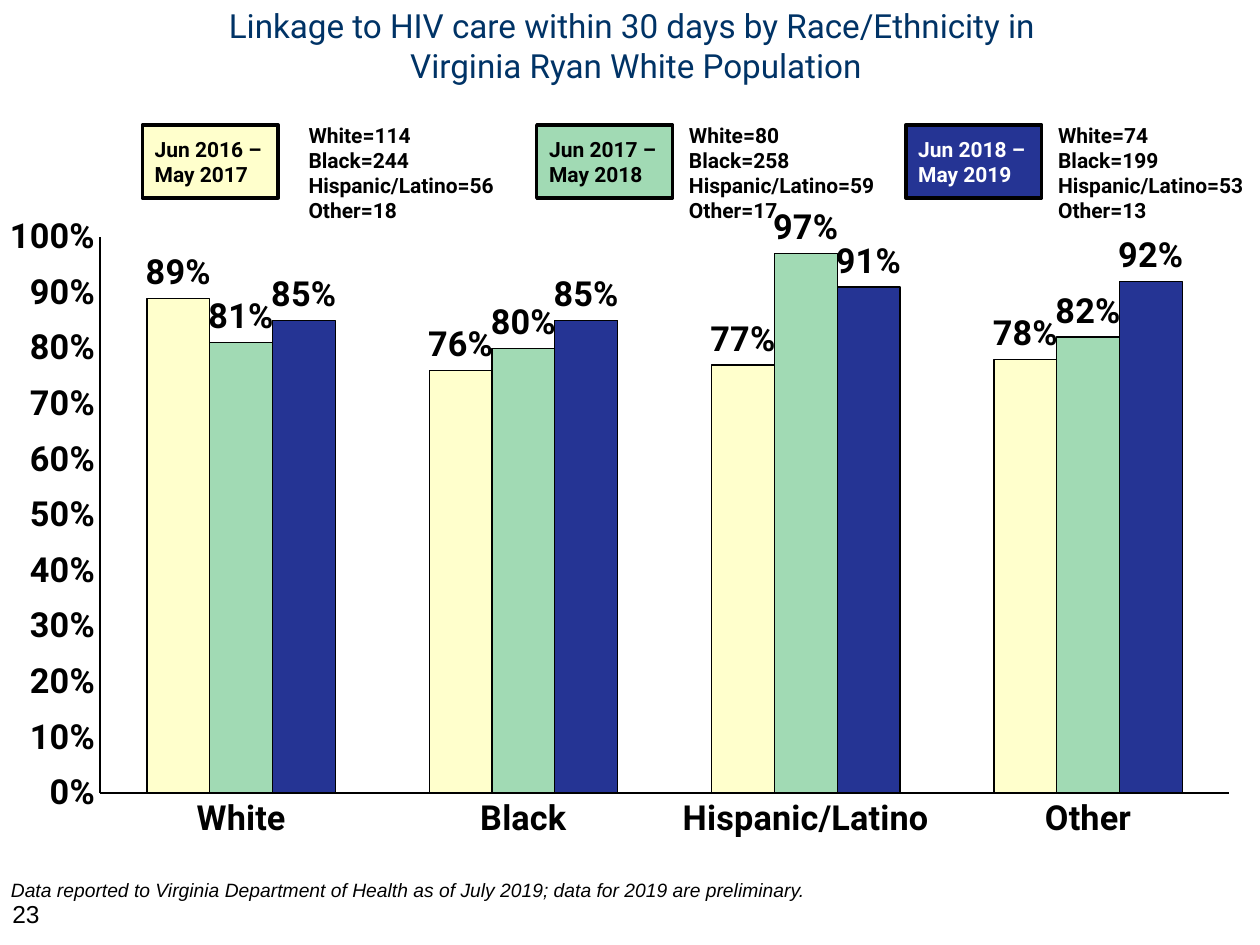
from lxml import etree
from pptx import Presentation
from pptx.chart.data import CategoryChartData
from pptx.dml.color import RGBColor
from pptx.enum.chart import XL_CHART_TYPE, XL_LABEL_POSITION, XL_TICK_MARK
from pptx.enum.shapes import MSO_SHAPE
from pptx.enum.text import MSO_ANCHOR, PP_ALIGN
from pptx.oxml.ns import qn
from pptx.util import Cm, Pt

COLUMN = XL_CHART_TYPE.COLUMN_CLUSTERED
OUTSIDE = XL_LABEL_POSITION.OUTSIDE_END
NO_TICK = XL_TICK_MARK.NONE
RECT = MSO_SHAPE.RECTANGLE
TOP, MIDDLE = MSO_ANCHOR.TOP, MSO_ANCHOR.MIDDLE
LEFT, CENTER = PP_ALIGN.LEFT, PP_ALIGN.CENTER

BLACK = RGBColor(0, 0, 0)
WHITE = RGBColor(255, 255, 255)
NAVY = RGBColor(0, 51, 102)
CREAM = RGBColor(255, 255, 204)
GREEN = RGBColor(161, 218, 180)
BLUE = RGBColor(37, 52, 148)

TITLE = "Linkage to HIV care within 30 days by Race/Ethnicity in \vVirginia Ryan White Population"
SOURCE = "Data reported to Virginia Department of Health as of July 2019; data for 2019 are preliminary."
PAGE = "23"
GROUPS = ["White", "Black", "Hispanic/Latino", "Other"]
PERIODS = [
    dict(name="Jun 2016 – May 2017", rates=(0.89, 0.76, 0.77, 0.78), counts=(114, 244, 56, 18),
         fill=CREAM, ink=BLACK, key=2.87, note=5.97, wide=6.53),
    dict(name="Jun 2017 – May 2018", rates=(0.81, 0.80, 0.97, 0.82), counts=(80, 258, 59, 17),
         fill=GREEN, ink=BLACK, key=10.82, note=13.64, wide=4.62),
    dict(name="Jun 2018 – May 2019", rates=(0.85, 0.85, 0.91, 0.92), counts=(74, 199, 53, 13),
         fill=BLUE, ink=WHITE, key=18.26, note=21.08, wide=4.39),
]
PLOT = dict(x=0.05, y=0.207, w=0.923, h=0.748)


def set_font(font, size, color=BLACK, name="Roboto", bold=False, italic=False):
    font.name, font.size = name, Pt(size)
    font.bold, font.italic = bold, italic
    font.color.rgb = color


def set_line(line, width):
    line.color.rgb = BLACK
    line.width = Pt(width)


def fill_text(shape, text, size, align=LEFT, anchor=TOP, **style):
    frame = shape.text_frame
    frame.word_wrap = True
    frame.vertical_anchor = anchor
    frame.text = text
    for para in frame.paragraphs:
        para.alignment = align
        for run in para.runs:
            set_font(run.font, size, **style)


def add_text(slide, box, text, size, **style):
    shape = slide.shapes.add_textbox(*map(Cm, box))
    fill_text(shape, text, size, **style)


def add_key(slide, period):
    key = slide.shapes.add_shape(RECT, Cm(period["key"]), Cm(2.52), Cm(2.74), Cm(1.47))
    key.shadow.inherit = False
    key.fill.solid()
    key.fill.fore_color.rgb = period["fill"]
    set_line(key.line, 2)
    fill_text(key, period["name"], 12, anchor=MIDDLE, color=period["ink"], bold=True)


def set_plot(chart):
    area = chart.element.find(".//" + qn("c:plotArea"))
    for old in area.findall(qn("c:layout")):
        area.remove(old)
    layout = etree.Element(qn("c:layout"))
    area.insert(0, layout)
    manual = etree.SubElement(layout, qn("c:manualLayout"))
    parts = [("layoutTarget", "inner"), ("xMode", "edge"), ("yMode", "edge"), *PLOT.items()]
    for tag, val in parts:
        etree.SubElement(manual, qn("c:" + tag)).set("val", str(val))


def add_rates(slide):
    data = CategoryChartData(number_format="0%")
    data.categories = GROUPS
    for period in PERIODS:
        data.add_series(period["name"], period["rates"])
    box = map(Cm, (0.2, 1.68, 25.25, 15.24))
    chart = slide.shapes.add_chart(COLUMN, *box, data).chart
    chart.has_legend = chart.has_title = False
    set_font(chart.font, 20, bold=True)
    set_plot(chart)

    for axis in (chart.category_axis, chart.value_axis):
        axis.has_major_gridlines = False
        axis.major_tick_mark = axis.minor_tick_mark = NO_TICK
        set_line(axis.format.line, 0.75)
    scale = chart.value_axis
    scale.minimum_scale, scale.maximum_scale, scale.major_unit = 0, 1, 0.1
    scale.tick_labels.number_format = "0%"
    scale.tick_labels.number_format_is_linked = False

    plot = chart.plots[0]
    plot.gap_width, plot.overlap = 150, 0
    plot.vary_by_categories = False
    for bars, period in zip(plot.series, PERIODS):
        bars.format.fill.solid()
        bars.format.fill.fore_color.rgb = period["fill"]
        set_line(bars.format.line, 0.75)
        labels = bars.data_labels
        labels.show_value = True
        labels.position = OUTSIDE
        labels.number_format = "0%"
        labels.number_format_is_linked = False
        set_font(labels.font, 20, bold=True)


def main():
    deck = Presentation()
    deck.slide_width, deck.slide_height = Cm(25.4), Cm(19.05)
    slide = deck.slides.add_slide(deck.slide_layouts[6])
    add_text(slide, (0, 18.1, 5.92, 0.64), PAGE, 14, anchor=MIDDLE, name="Arial")
    add_rates(slide)
    add_text(slide, (-0.2, 0.15, 26.04, 1.52), TITLE, 19, align=CENTER, anchor=MIDDLE, color=NAVY)
    for period in PERIODS:
        note = "\n".join(f"{group}={count}" for group, count in zip(GROUPS, period["counts"]))
        add_text(slide, (period["note"], 2.34, period["wide"], 2.31), note, 12, bold=True)
        add_key(slide, period)
    add_text(slide, (-0.03, 17.58, 23.7, 0.74), SOURCE, 11, name="Arial", italic=True)
    deck.save("out.pptx")


if __name__ == "__main__":
    main()
